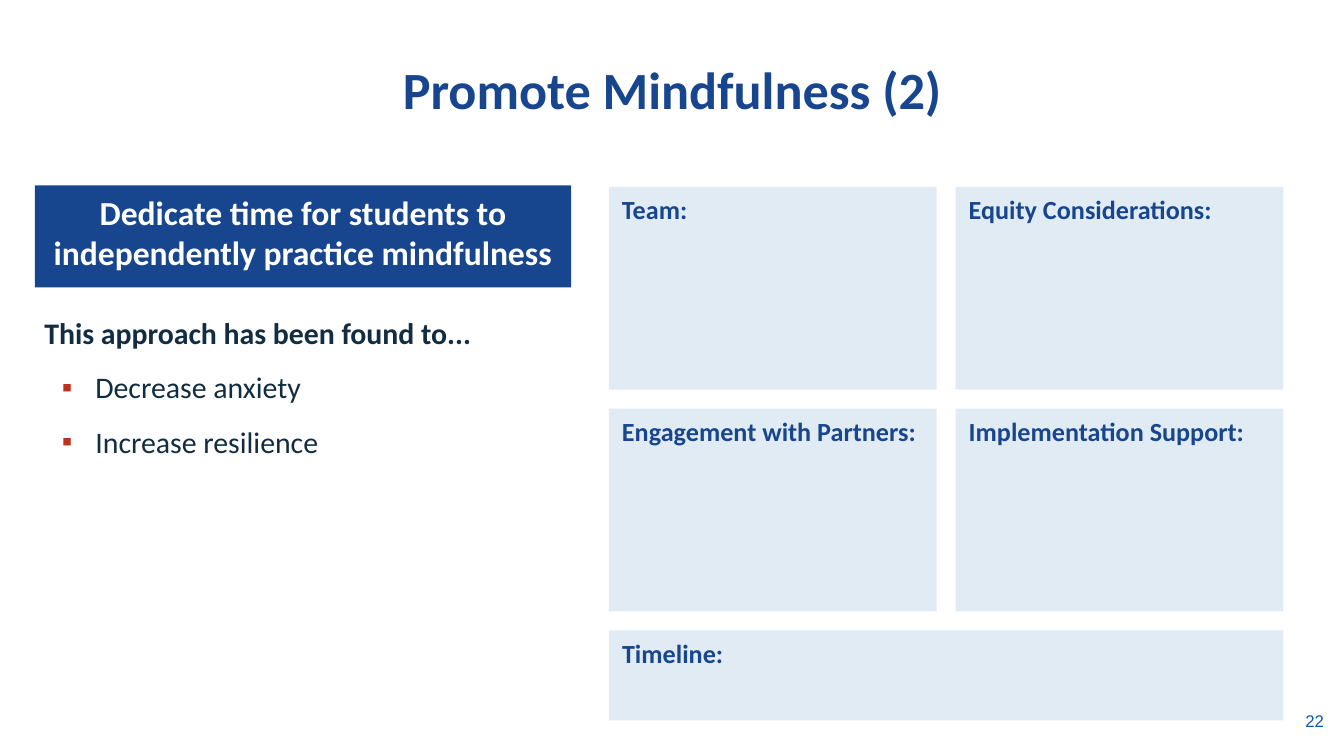
from lxml import etree
from pptx import Presentation
from pptx.dml.color import RGBColor
from pptx.enum import shapes, text
from pptx.oxml.ns import qn
from pptx.util import Inches, Pt

NAVY, INK, RED, SKY, WHITE = "17468F", "122C41", "BF311B", "86B2D7", "FFFFFF"
LINK_BLUE = "015DAA"
ALIGN = text.PP_ALIGN


def color(value):
    return RGBColor.from_string(value)


def write(para, words, tint, font=None, **formats):
    """Fill a paragraph; formats are paragraph attributes."""
    span = para.add_run()
    span.text = words
    for name, value in ({"name": "Calibri", "bold": True} | (font or {})).items():
        setattr(span.font, name, value)
    span.font.color.rgb = color(tint)
    for name, value in formats.items():
        setattr(para, name, value)


def set_frame(shape, anchor=text.MSO_ANCHOR.TOP, side=0.1, end=0.05):
    frame = shape.text_frame
    formats = {
        "word_wrap": True, "vertical_anchor": anchor,
        "margin_left": Inches(side), "margin_right": Inches(side),
        "margin_top": Inches(end), "margin_bottom": Inches(end),
    }
    for name, value in formats.items():
        setattr(frame, name, value)
    return frame


def add_text(page, box, **frame_formats):
    return set_frame(page.shapes.add_textbox(*map(Inches, box)), **frame_formats)


def add_panel(page, box, fill, opacity=100):
    panel = page.shapes.add_shape(shapes.MSO_SHAPE.RECTANGLE, *map(Inches, box))
    panel.shadow.inherit = False
    panel.line.fill.background()
    panel.fill.solid()
    panel.fill.fore_color.rgb = color(fill)
    if opacity < 100:
        tint = panel.fill._xPr.find(qn("a:solidFill"))[0]
        etree.SubElement(tint, qn("a:alpha"), val=str(opacity * 1000))
    return set_frame(panel)


def add_bullet(para):
    props = para._p.get_or_add_pPr()
    props.set("marL", str(Inches(0.38)))
    props.set("indent", str(Inches(-0.25)))
    tint = etree.SubElement(props, qn("a:buClr"))
    etree.SubElement(tint, qn("a:srgbClr"), val=RED)
    etree.SubElement(props, qn("a:buFont"), typeface="Arial")
    etree.SubElement(props, qn("a:buChar"), char="▪")


def title(page, box):
    frame = add_text(page, box, anchor=text.MSO_ANCHOR.BOTTOM)
    write(frame.paragraphs[0], "Promote Mindfulness (2)", NAVY, {"size": Pt(28)},
          alignment=ALIGN.CENTER, line_spacing=Pt(30))


def approach(page, left, top):
    # Strategy banner
    banner = add_panel(page, (left, top, 3.99, 0.76), NAVY)
    write(banner.paragraphs[0],
          "Dedicate time for students to independently practice mindfulness",
          WHITE, {"size": Pt(18)}, alignment=ALIGN.CENTER)

    # Benefits
    frame = add_text(page, (left, top + 0.92, 4.05, 2.01), side=0.07, end=0.04)
    write(frame.paragraphs[0], "This approach has been found to...", INK,
          {"size": Pt(16)})
    for benefit in ("Decrease anxiety", "Increase resilience"):
        para = frame.add_paragraph()
        add_bullet(para)
        write(para, benefit, INK, {"size": Pt(16), "bold": False},
              space_before=Pt(10))


def planning_grid(page, left, top):
    width, height, gap = 2.44, 1.51, 0.14
    cards = [
        # label, column, row, columns spanned, height
        ("Team:", 0, 0, 1, height),
        ("Equity Considerations:", 1, 0, 1, height),
        ("Engagement with Partners:", 0, 1, 1, height),
        ("Implementation Support:", 1, 1, 1, height),
        ("Timeline:", 0, 2, 2, 0.67),
    ]
    for label, column, row, span, tall in cards:
        box = (left + column * (width + gap), top + row * (height + gap),
               span * width + (span - 1) * gap, tall)
        frame = add_panel(page, box, SKY, opacity=25)
        write(frame.paragraphs[0], label, NAVY, {"size": Pt(14)},
              alignment=ALIGN.LEFT)


def page_number(page, box):
    frame = add_text(page, box)
    write(frame.paragraphs[0], "22", LINK_BLUE,
          {"name": "Arial", "size": Pt(9), "bold": False}, alignment=ALIGN.RIGHT)


def main():
    deck = Presentation()
    # Widescreen, 16:9
    deck.slide_width = Inches(10)
    deck.slide_height = Inches(10 * 9 / 16)
    page = deck.slides.add_slide(deck.slide_layouts[6])
    title(page, (0.5, 0, 9, 0.94))
    approach(page, 0.26, 1.38)
    planning_grid(page, 4.53, 1.39)
    page_number(page, (9.09, 5.24, 0.86, 0.3))
    deck.save("out.pptx")


if __name__ == "__main__":
    main()
